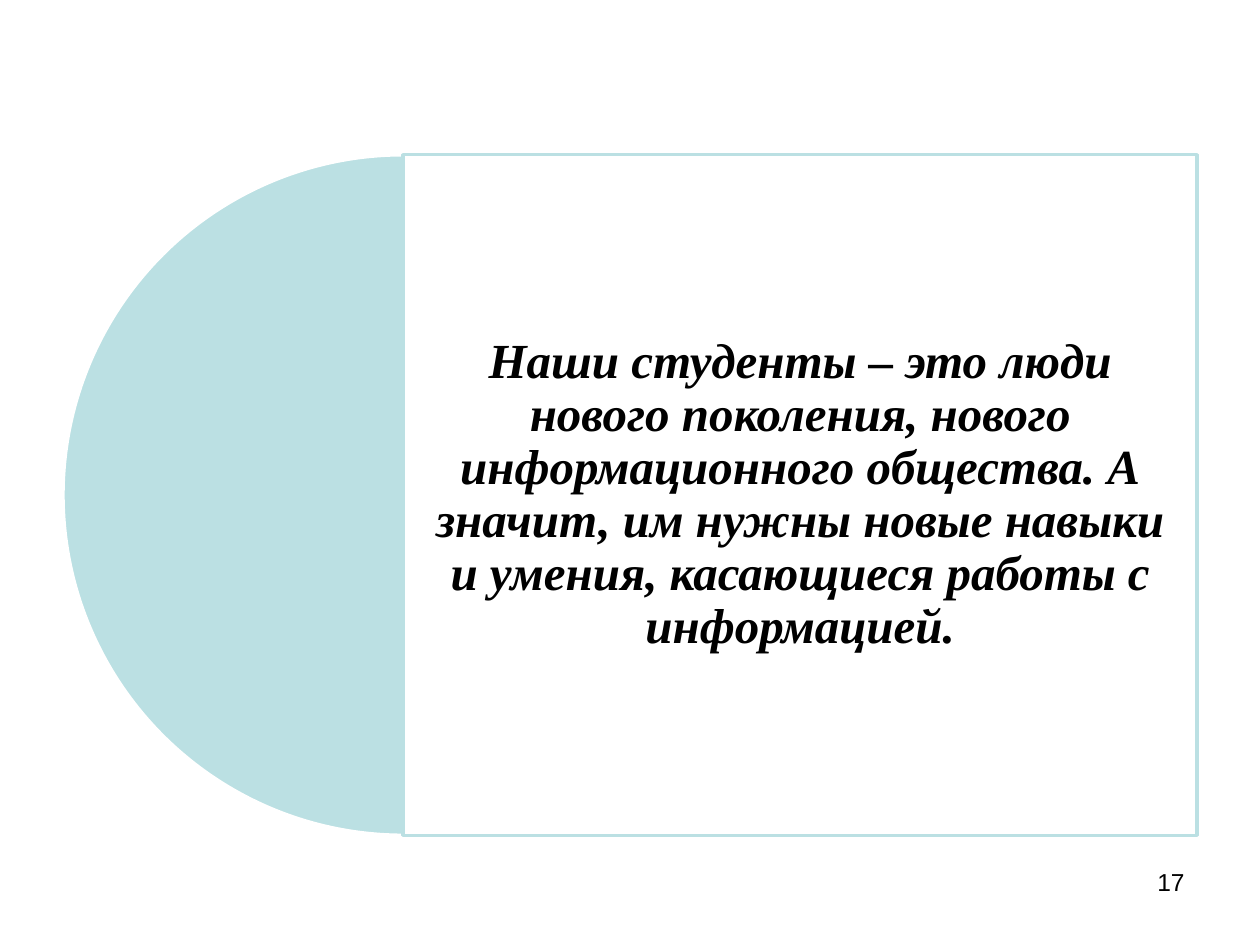
from lxml import etree
from pptx import Presentation
from pptx import util as u
from pptx.dml.color import RGBColor
from pptx.enum import shapes, text
from pptx.oxml.ns import qn

COLORS = {"aqua": "BBE0E3", "white": "FFFFFF", "black": "000000"}
STATEMENT = (
    "Наши студенты – это люди нового поколения, нового информационного "
    "общества. А значит, им нужны новые навыки и умения, касающиеся работы "
    "с информацией."
)
PANEL_TOP = 3.12
DIAMETER = 13.72
CIRCLE_LEFT = 1.27
PANEL_LEFT = CIRCLE_LEFT + DIAMETER / 2
PANEL_WIDTH = 16


def color(name):
    return RGBColor.from_string(COLORS[name])


def add_figure(slide, kind, left, top, width, height, fill, line):
    figure = slide.shapes.add_shape(
        kind, u.Cm(left), u.Cm(top), u.Cm(width), u.Cm(height)
    )
    figure.shadow.inherit = False
    figure.fill.solid()
    figure.fill.fore_color.rgb = color(fill)
    figure.line.color.rgb = color(line)
    figure.line.width = u.Pt(2)
    return figure


def set_opacity(figure, percent):
    fill = figure._element.spPr.find(qn("a:solidFill"))
    alpha = etree.SubElement(fill.find(qn("a:srgbClr")), qn("a:alpha"))
    alpha.set("val", str(percent * 1000))


def write(frame, words, font, size, align, bold=False, italic=False,
          spacing=1.0, anchor=text.MSO_ANCHOR.TOP, inset=None):
    frame.word_wrap = True
    frame.vertical_anchor = anchor
    if inset is not None:
        frame.margin_left = frame.margin_right = u.Cm(inset)
        frame.margin_top = frame.margin_bottom = u.Cm(inset)
    paragraph = frame.paragraphs[0]
    paragraph.alignment = align
    paragraph.line_spacing = spacing
    run = paragraph.add_run()
    run.text = words
    run.font.name = font
    run.font.size = u.Pt(size)
    run.font.bold = bold
    run.font.italic = italic
    run.font.color.rgb = color("black")


def add_half_circle(slide):
    half_circle = add_figure(
        slide, shapes.MSO_SHAPE.PIE, CIRCLE_LEFT, PANEL_TOP,
        DIAMETER, DIAMETER, "aqua", "white"
    )
    half_circle.adjustments[0] = 54
    half_circle.adjustments[1] = 162


def add_statement(slide):
    panel = add_figure(
        slide, shapes.MSO_SHAPE.RECTANGLE, PANEL_LEFT, PANEL_TOP,
        PANEL_WIDTH, DIAMETER, "white", "aqua"
    )
    set_opacity(panel, 90)
    write(panel.text_frame, STATEMENT, "Times New Roman", 28,
          text.PP_ALIGN.CENTER, bold=True, italic=True, spacing=0.9,
          anchor=text.MSO_ANCHOR.MIDDLE, inset=0.3)


def add_page_number(slide):
    page_number = slide.shapes.add_textbox(
        u.Cm(18.2), u.Cm(17.35), u.Cm(5.93), u.Cm(1.32)
    )
    write(page_number.text_frame, "17", "Arial", 14, text.PP_ALIGN.RIGHT)


def main():
    deck = Presentation()
    deck.slide_width = u.Cm(25.4)
    deck.slide_height = u.Cm(19.05)
    slide = deck.slides.add_slide(deck.slide_layouts[6])
    add_half_circle(slide)
    add_statement(slide)
    add_page_number(slide)
    deck.save("out.pptx")


if __name__ == "__main__":
    main()
